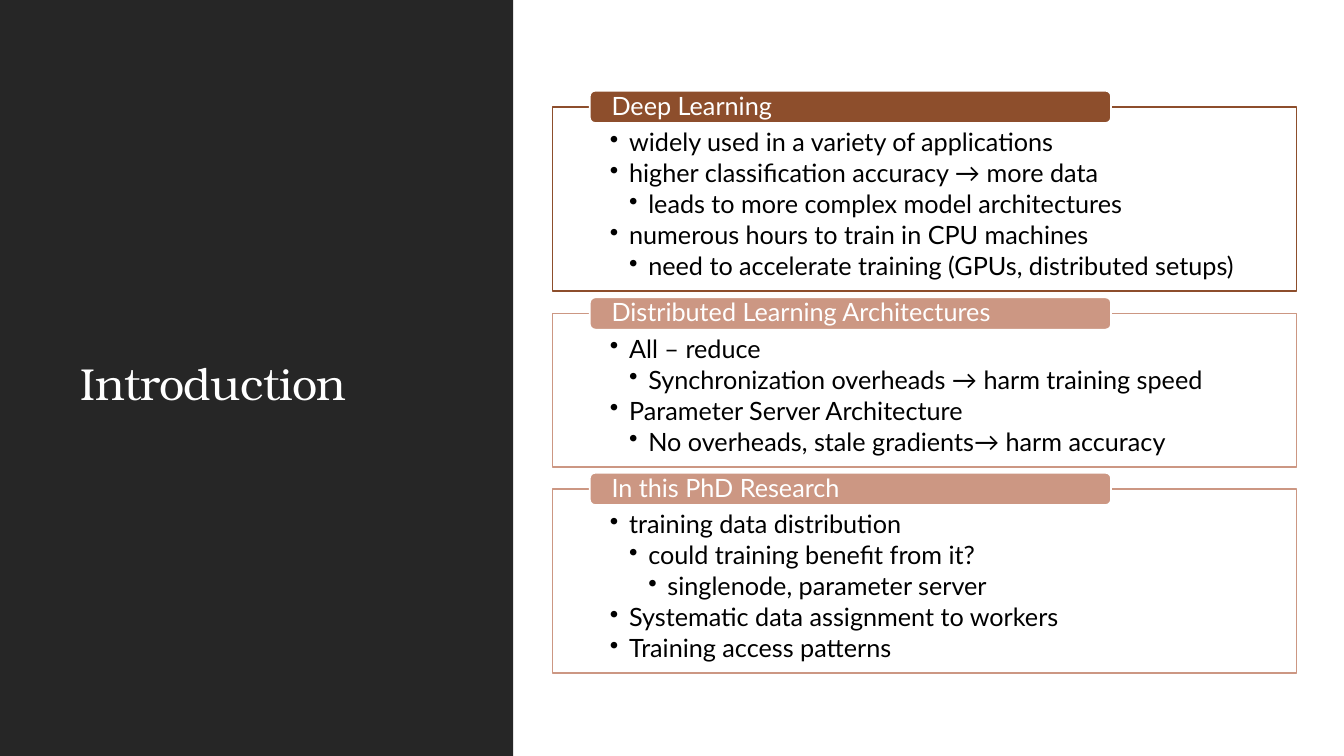
from dataclasses import dataclass

from lxml import etree
from pptx import Presentation
from pptx.dml.color import RGBColor
from pptx.enum.shapes import MSO_SHAPE
from pptx.enum.text import MSO_ANCHOR, MSO_AUTO_SIZE, PP_ALIGN
from pptx.oxml.ns import qn
from pptx.util import Inches, Pt

RECT, PILL = MSO_SHAPE.RECTANGLE, MSO_SHAPE.ROUNDED_RECTANGLE
TOP, MIDDLE, BOTTOM = MSO_ANCHOR.TOP, MSO_ANCHOR.MIDDLE, MSO_ANCHOR.BOTTOM
LEFT = PP_ALIGN.LEFT
NO_FIT = MSO_AUTO_SIZE.NONE
TITLE_ONLY = 5


@dataclass(frozen=True)
class Theme:
    dark: str = "262626"
    white: str = "FFFFFF"
    black: str = "000000"
    brown: str = "8D4E2C"
    rose: str = "CC9783"
    title_font: str = "TeX Gyre Bonum"
    body_font: str = "Lato"
    title_size: float = 32
    body_size: float = 18
    line_width: float = 1.25
    line_spacing: float = 0.9
    bullet_gap: float = 2.7


@dataclass(frozen=True)
class Bullet:
    text: str
    level: int = 1


@dataclass(frozen=True)
class Section:
    heading: str
    color: str
    bullets: tuple[Bullet, ...]

    @property
    def height(self) -> float:
        return 0.28 + 0.31 * len(self.bullets)


THEME = Theme()
FRAME_LEFT, FRAME_WIDTH = 5.48, 7.38
FIRST_TOP, SECTION_GAP = 1.06, 0.22
INDENT = 0.19

SECTIONS = (
    Section("Deep Learning", THEME.brown, (
        Bullet("widely used in a variety of applications"),
        Bullet("higher classification accuracy → more data"),
        Bullet("leads to more complex model architectures", 2),
        Bullet("numerous hours to train in CPU machines"),
        Bullet("need to accelerate training (GPUs, distributed setups)", 2),
    )),
    Section("Distributed Learning Architectures", THEME.rose, (
        Bullet("All – reduce"),
        Bullet("Synchronization overheads → harm training speed", 2),
        Bullet("Parameter Server Architecture"),
        Bullet("No overheads, stale gradients→ harm accuracy", 2),
    )),
    Section("In this PhD Research", THEME.rose, (
        Bullet("training data distribution"),
        Bullet("could training benefit from it?", 2),
        Bullet("singlenode, parameter server", 3),
        Bullet("Systematic data assignment to workers"),
        Bullet("Training access patterns"),
    )),
)


def add_box(slide, kind, left: float, top: float, width: float, height: float,
            fill: str, line: str | None = None):
    sp = slide.shapes.add_shape(kind, Inches(left), Inches(top), Inches(width), Inches(height))
    sp.shadow.inherit = False
    sp.fill.solid()
    sp.fill.fore_color.rgb = RGBColor.from_string(fill)
    if line:
        sp.line.color.rgb = RGBColor.from_string(line)
        sp.line.width = Pt(THEME.line_width)
    else:
        sp.line.fill.background()
    return sp


def set_frame(tf, anchor, side: float, top: float, bottom: float) -> None:
    tf.word_wrap = True
    tf.auto_size = NO_FIT
    tf.vertical_anchor = anchor
    tf.margin_left = tf.margin_right = Inches(side)
    tf.margin_top, tf.margin_bottom = Inches(top), Inches(bottom)


def style_paragraph(p, font: str, size: float, color: str) -> None:
    p.alignment = LEFT
    p.line_spacing = THEME.line_spacing
    p.font.name = font
    p.font.size = Pt(size)
    p.font.color.rgb = RGBColor.from_string(color)


def set_bullet(p, level: int) -> None:
    p.level = level
    p.space_after = Pt(THEME.bullet_gap)
    pPr = p._p.get_or_add_pPr()
    pPr.set("marL", str(Inches(INDENT * level)))
    pPr.set("indent", str(-Inches(INDENT)))
    bullet = etree.Element(qn("a:buChar"), char="•")
    pPr.find(qn("a:defRPr")).addprevious(bullet)


def add_section(slide, section: Section, top: float) -> None:
    frame = add_box(slide, RECT, FRAME_LEFT, top, FRAME_WIDTH, section.height,
                    THEME.white, section.color)
    tf = frame.text_frame
    set_frame(tf, TOP, side=0.57, top=0.23, bottom=0.14)
    for i, bullet in enumerate(section.bullets):
        p = tf.add_paragraph() if i else tf.paragraphs[0]
        p.text = bullet.text
        style_paragraph(p, THEME.body_font, THEME.body_size, THEME.black)
        set_bullet(p, bullet.level)

    heading = add_box(slide, PILL, FRAME_LEFT + 0.37, top - 0.16, 5.17, 0.32,
                      section.color, THEME.white)
    set_frame(heading.text_frame, MIDDLE, side=0.2, top=0, bottom=0)
    p = heading.text_frame.paragraphs[0]
    p.text = section.heading
    style_paragraph(p, THEME.body_font, THEME.body_size, THEME.white)


def add_title(slide, text: str) -> None:
    """Fill the title placeholder and set the dark side panel behind it."""
    panel = add_box(slide, RECT, 0, 0, 5.09, 7.5, THEME.dark)
    title = slide.shapes.title
    title._element.addprevious(panel._element)
    title.left, title.top = Inches(0.7), Inches(3.45)
    title.width, title.height = Inches(3.85), Inches(0.67)
    set_frame(title.text_frame, BOTTOM, side=0.1, top=0.05, bottom=0.05)
    p = title.text_frame.paragraphs[0]
    p.text = text
    style_paragraph(p, THEME.title_font, THEME.title_size, THEME.white)
    p.runs[0]._r.get_or_add_rPr().set("spc", "-50")


def main() -> None:
    prs = Presentation()
    prs.slide_width, prs.slide_height = Inches(13.33), Inches(7.5)
    slide = prs.slides.add_slide(prs.slide_layouts[TITLE_ONLY])
    add_title(slide, "Introduction")
    top = FIRST_TOP
    for section in SECTIONS:
        add_section(slide, section, top)
        top += section.height + SECTION_GAP
    prs.save("out.pptx")


if __name__ == "__main__":
    main()
